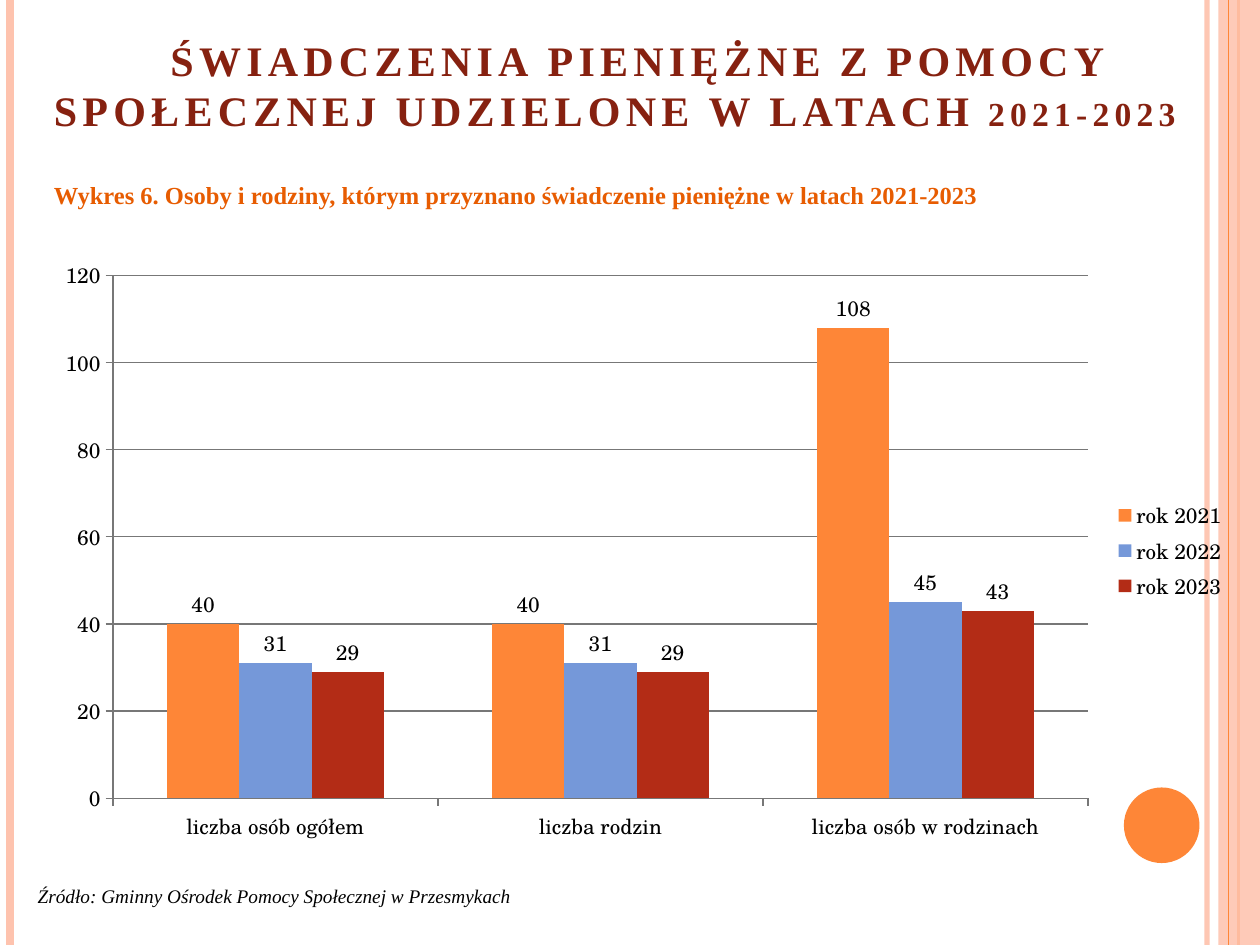
from pptx import Presentation
from pptx.chart.data import CategoryChartData
from pptx.dml.color import RGBColor
from pptx.enum import chart as charts, shapes, text
from pptx.oxml import ns
from pptx.util import Inches, Pt
from lxml import etree

ORANGE = RGBColor(0xFE, 0x86, 0x37)
PEACH = RGBColor(0xFE, 0xC3, 0xAE)
DARK_ORANGE = RGBColor(0xE7, 0x5C, 0x01)
BLUE = RGBColor(0x75, 0x98, 0xD9)
RED = RGBColor(0xB3, 0x2C, 0x16)
MAROON = RGBColor(0x86, 0x21, 0x10)
GREY = RGBColor(0x77, 0x77, 0x77)
BLACK = RGBColor(0, 0, 0)

YEARS = [
    ("rok 2021", (40, 40, 108), ORANGE),
    ("rok 2022", (31, 31, 45), BLUE),
    ("rok 2023", (29, 29, 43), RED),
]
GROUPS = ["liczba osób ogółem", "liczba rodzin", "liczba osób w rodzinach"]


def set_opacity(fill_parent, percent):
    color = fill_parent.find(".//" + ns.qn("a:srgbClr"))
    etree.SubElement(color, ns.qn("a:alpha")).set("val", str(percent * 1000))


class SlideBuilder:
    text_font = "Times New Roman"
    chart_font = "TeX Gyre Schola"

    def __init__(self, slide):
        self.slide = slide

    def stripe(self, x, color, width, opacity=100):
        """Draw a vertical line over the full slide height."""
        line = self.slide.shapes.add_connector(
            shapes.MSO_CONNECTOR.STRAIGHT, Inches(x), 0, Inches(x), Inches(7.5))
        line.line.color.rgb = color
        line.line.width = Pt(width)
        properties = line._element.spPr
        if opacity < 100:
            set_opacity(properties, opacity)
        etree.SubElement(properties, ns.qn("a:effectLst"))

    def shape(self, kind, box, color, opacity=100):
        shape = self.slide.shapes.add_shape(kind, *map(Inches, box))
        shape.shadow.inherit = False
        shape.fill.solid()
        shape.fill.fore_color.rgb = color
        shape.line.fill.background()
        if opacity < 100:
            set_opacity(shape._element.spPr, opacity)

    def text(self, words, box, size, color, bold=False, italic=False):
        frame = self.slide.shapes.add_textbox(*map(Inches, box)).text_frame
        frame.word_wrap = True
        frame.text = words
        font = frame.paragraphs[0].runs[0].font
        font.name, font.size, font.color.rgb = self.text_font, Pt(size), color
        font.bold, font.italic = bold, italic
        return frame

    def title(self, words, box):
        frame = self.text(words, box, 24, MAROON, bold=True)
        frame.vertical_anchor = text.MSO_ANCHOR.BOTTOM
        heading = frame.paragraphs[0]
        heading.alignment = text.PP_ALIGN.CENTER
        properties = heading.runs[0].font._element
        properties.set("cap", "small")
        properties.set("spc", "300")

    def style_chart_font(self, font):
        font.name, font.size, font.color.rgb = self.chart_font, Pt(12), BLACK

    def column_chart(self, groups, years, box):
        data = CategoryChartData()
        data.categories = groups
        for name, values, _ in years:
            data.add_series(name, values)
        chart = self.slide.shapes.add_chart(
            charts.XL_CHART_TYPE.COLUMN_CLUSTERED, *map(Inches, box), data).chart
        self.style_chart_font(chart.font)
        chart.has_title = False
        chart.has_legend = True
        chart.legend.position = charts.XL_LEGEND_POSITION.RIGHT
        chart.legend.include_in_layout = False
        self.style_chart_font(chart.legend.font)

        for axis in (chart.category_axis, chart.value_axis):
            axis.major_tick_mark = charts.XL_TICK_MARK.OUTSIDE
            axis.format.line.color.rgb = GREY
            self.style_chart_font(axis.tick_labels.font)
        values = chart.value_axis
        values.minimum_scale, values.maximum_scale, values.major_unit = 0, 120, 20
        values.has_major_gridlines = True
        values.major_gridlines.format.line.color.rgb = GREY

        plot = chart.plots[0]
        plot.gap_width, plot.overlap = 150, 0
        plot.vary_by_categories = False
        for series, (_, _, color) in zip(plot.series, years):
            series.format.fill.solid()
            series.format.fill.fore_color.rgb = color
            labels = series.data_labels
            labels.show_value = True
            labels.position = charts.XL_LABEL_POSITION.OUTSIDE_END
            self.style_chart_font(labels.font)


def main():
    deck = Presentation()
    deck.slide_width, deck.slide_height = Inches(10), Inches(7.5)
    page = SlideBuilder(deck.slides.add_slide(deck.slide_layouts[6]))

    page.stripe(9.58, PEACH, 3, opacity=93)
    page.stripe(0.08, PEACH, 4.5)
    page.stripe(9.83, ORANGE, 1.5)
    page.shape(shapes.MSO_SHAPE.RECTANGLE, (9.67, 0, 0.33, 7.5), PEACH, opacity=87)
    page.stripe(9.75, ORANGE, 0.75)
    page.shape(shapes.MSO_SHAPE.OVAL, (8.92, 6.25, 0.6, 0.6), ORANGE)

    page.title("ŚWIADCZENIA PIENIĘŻNE Z POMOCY SPOŁECZNEJ UDZIELONE W LATACH 2021-2023",
               (0.33, 0.2, 9.5, 0.92))
    page.text("Wykres 6. Osoby i rodziny, którym przyznano świadczenie pieniężne "
              "w latach 2021-2023", (0.33, 1.38, 9.53, 0.49), 14, DARK_ORANGE, bold=True)
    page.column_chart(GROUPS, YEARS, (0.33, 1.97, 9.5, 4.8))
    page.text("Źródło: Gminny Ośrodek Pomocy Społecznej w Przesmykach",
              (0.2, 6.97, 5, 0.29), 11, BLACK, italic=True)

    deck.save("out.pptx")


if __name__ == "__main__":
    main()
